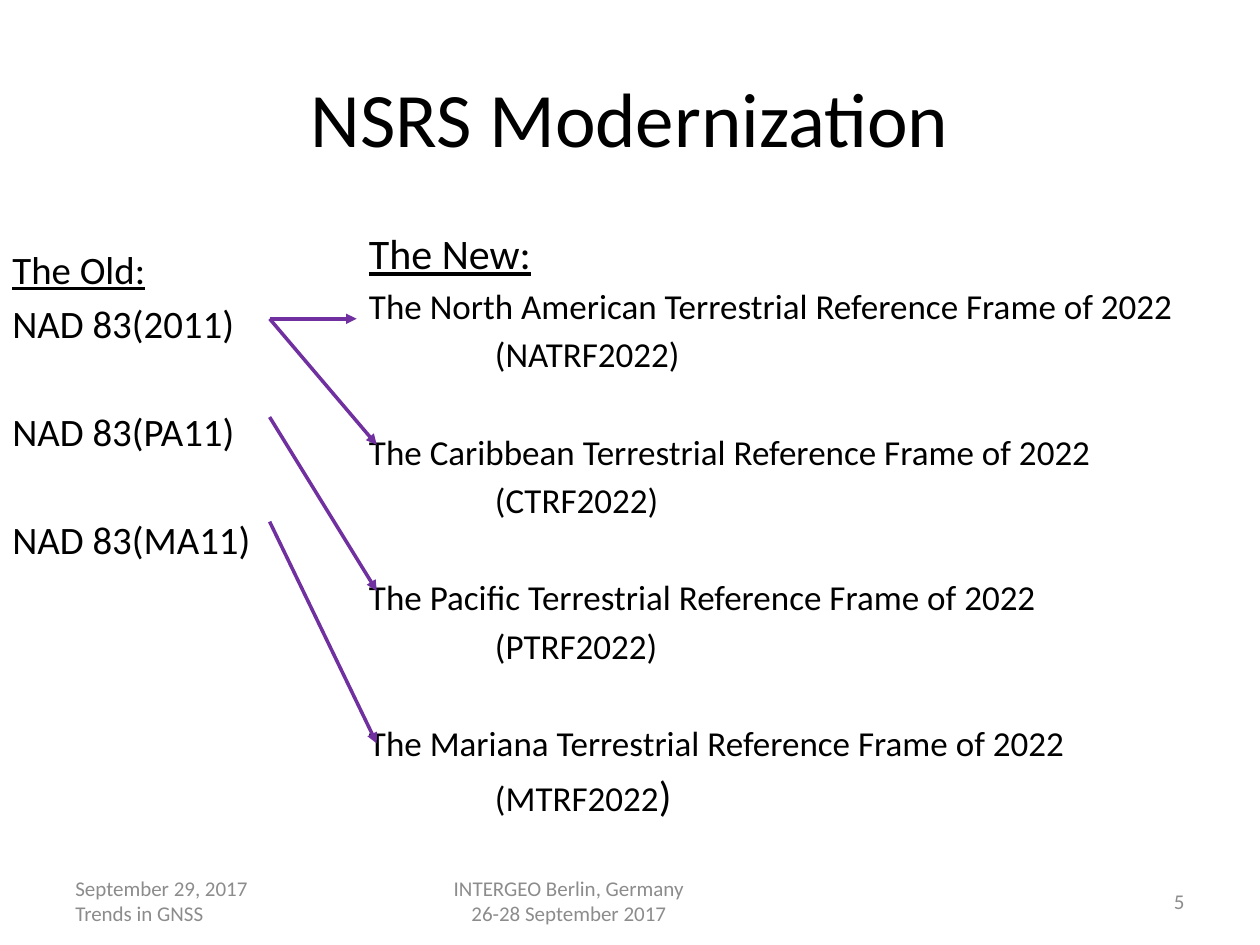
import pptx
import pptx.util
import pptx.dml.color
import pptx.enum.shapes
import pptx.enum.text
import pptx.oxml.ns
import lxml.etree

Inches, Pt = pptx.util.Inches, pptx.util.Pt
ALIGN = pptx.enum.text.PP_ALIGN
ANCHOR = pptx.enum.text.MSO_ANCHOR
COLORS = {"text": "000000", "arrow": "7030A0", "footer": "8C8C8C"}
FONT = "Calibri"

TITLE = "NSRS Modernization"
OLD_DATUMS = ["NAD 83(2011)", "NAD 83(PA11)", "NAD 83(MA11)"]
NEW_FRAMES = [
    ("The North American Terrestrial Reference Frame of 2022", "(NATRF2022)"),
    ("The Caribbean Terrestrial Reference Frame of 2022", "(CTRF2022)"),
    ("The Pacific Terrestrial Reference Frame of 2022", "(PTRF2022)"),
    ("The Mariana Terrestrial Reference Frame of 2022", "(MTRF2022"),
]
LAST_BRACKET = ")"
ARROW_LEFT = 2.14
ARROWS = [  # start y, end x, end y
    (2.53, 2.83, 2.53),
    (2.53, 2.99, 3.53),
    (3.31, 2.99, 4.69),
    (4.14, 2.99, 5.9),
]
FOOTERS = [  # left, width, alignment, lines
    (0.5, 2.33, ALIGN.LEFT, ["September 29, 2017", "Trends in GNSS"]),
    (3.42, 3.17, ALIGN.CENTER, ["INTERGEO Berlin, Germany", "26-28 September 2017"]),
    (7.17, 2.33, ALIGN.RIGHT, ["5"]),
]


def style(font, size, color="text", underline=None):
    font.name, font.size, font.underline = FONT, Pt(size), underline
    font.color.rgb = pptx.dml.color.RGBColor.from_string(COLORS[color])


def add_box(slide, left, top, width, height):
    box = slide.shapes.add_textbox(*map(Inches, (left, top, width, height)))
    box.text_frame.word_wrap = True
    return box.text_frame


def add_line(frame, text, size, space=0, indent=0, **look):
    """Append a paragraph, filling the empty first one if there is no text yet."""
    para = frame.add_paragraph() if frame.text else frame.paragraphs[0]
    para.text = text
    para.space_before = Pt(space)
    if indent:
        para._p.get_or_add_pPr().set("marL", str(Inches(indent)))
    style(para.runs[0].font, size, **look)
    return para


def add_arrow(slide, start_y, end_x, end_y):
    arrow = slide.shapes.add_connector(
        pptx.enum.shapes.MSO_CONNECTOR.STRAIGHT,
        *map(Inches, (ARROW_LEFT, start_y, end_x, end_y)))
    arrow.line.width = Pt(2)
    arrow.line.color.rgb = pptx.dml.color.RGBColor.from_string(COLORS["arrow"])
    qn = pptx.oxml.ns.qn
    lxml.etree.SubElement(arrow.line._get_or_add_ln(), qn("a:tailEnd"), type="triangle")
    lxml.etree.SubElement(arrow._element.spPr, qn("a:effectLst"))


def main():
    deck = pptx.Presentation()
    deck.slide_width, deck.slide_height = Inches(10), Inches(7.5)
    slide = deck.slides.add_slide(deck.slide_layouts[5])

    title = slide.shapes.title
    title.left, title.top, title.width, title.height = map(Inches, (0.5, 0.3, 9, 1.25))
    title.text_frame.text = TITLE
    title.text_frame.vertical_anchor = ANCHOR.MIDDLE
    title.text_frame.paragraphs[0].alignment = ALIGN.CENTER
    style(title.text_frame.paragraphs[0].runs[0].font, 44)

    old = add_box(slide, 0, 1.9, 2.99, 2.58)
    add_line(old, "The Old:", 22.2, underline=True)
    for index, datum in enumerate(OLD_DATUMS):
        add_line(old, datum, 22.2, space=35.2 if index else 4)

    new = add_box(slide, 2.83, 1.76, 6.92, 5.25)
    add_line(new, "The New:", 24, underline=True)
    for index, (name, code) in enumerate(NEW_FRAMES):
        add_line(new, name, 20, space=31.6 if index else 3.6)
        code_line = add_line(new, code, 20, space=3.6, indent=1)
    bracket = code_line.add_run()
    bracket.text = LAST_BRACKET
    style(bracket.font, 24)

    for arrow in ARROWS:
        add_arrow(slide, *arrow)

    for left, width, alignment, lines in FOOTERS:
        frame = add_box(slide, left, 6.95, width, 0.4)
        frame.vertical_anchor = ANCHOR.MIDDLE
        for text in lines:
            add_line(frame, text, 12, color="footer").alignment = alignment
        if alignment == ALIGN.CENTER:  # the first line sits left of the second
            frame.paragraphs[0]._p.get_or_add_pPr().set("marR", str(Inches(0.98)))

    deck.save("out.pptx")


if __name__ == "__main__":
    main()
